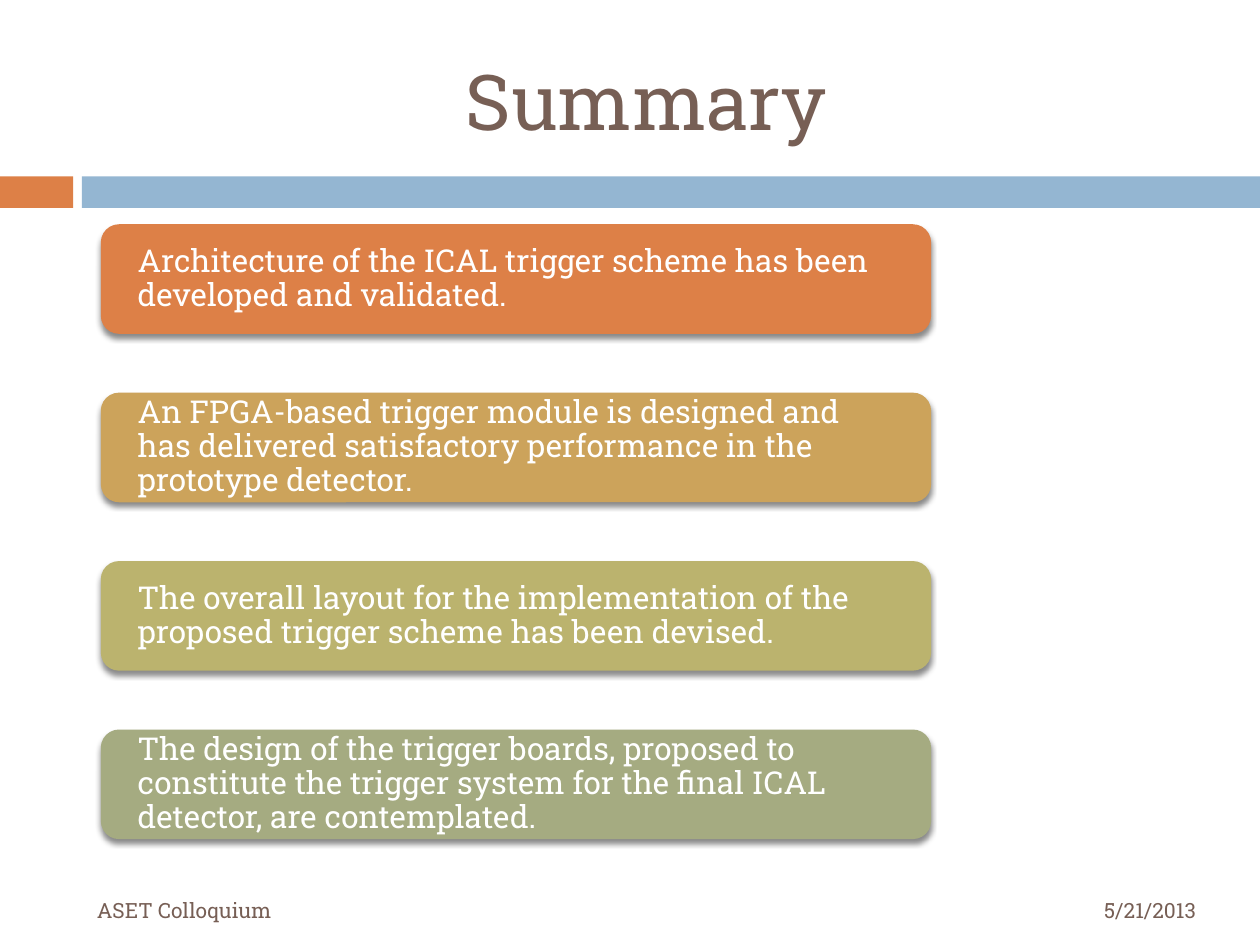
from lxml import etree
from pptx import Presentation
from pptx.dml.color import RGBColor
from pptx.enum.shapes import MSO_SHAPE
from pptx.enum.text import MSO_ANCHOR, PP_ALIGN
from pptx.oxml.ns import qn
from pptx.util import Inches, Pt

RECTANGLE = MSO_SHAPE.RECTANGLE
ROUNDED = MSO_SHAPE.ROUNDED_RECTANGLE
MIDDLE = MSO_ANCHOR.MIDDLE
LEFT, CENTER, RIGHT = PP_ALIGN.LEFT, PP_ALIGN.CENTER, PP_ALIGN.RIGHT

FONT = "Roboto Slab"
BROWN, ORANGE, BLUE, WHITE = "775F55", "DD8047", "94B6D2", "FFFFFF"
WIDTH, HEIGHT = 10, 7.5
MARGIN = 0.67
CONTENT_WIDTH = 8.92
BAND_TOP, BAND_HEIGHT = 1.4, 0.25
CARD_LEFT, CARD_WIDTH, CARD_HEIGHT = 0.8, 6.59, 0.87
FIRST_CARD_TOP, LAST_CARD_TOP = 1.78, 5.79
FOOTER_TOP, FOOTER_HEIGHT = 7.02, 0.4

CARDS = [
    (ORANGE, "Architecture of the ICAL trigger scheme has been developed and validated."),
    ("CCA35B", "An FPGA-based trigger module is designed and has delivered "
               "satisfactory performance in the prototype detector."),
    ("BBB36E", "The overall layout for the implementation of the proposed "
               "trigger scheme has been devised."),
    ("A5AB81", "The design of the trigger boards, proposed to constitute the "
               "trigger system for the final ICAL detector, are contemplated."),
]


def color(value):
    return RGBColor.from_string(value)


def write(shape, text, size, ink, align):
    frame = shape.text_frame
    frame.word_wrap = True
    frame.vertical_anchor = MIDDLE
    para = frame.paragraphs[0]
    para.text = text
    para.alignment = align
    para.font.name = FONT
    para.font.size = Pt(size)
    para.font.color.rgb = color(ink)
    return frame


def add_block(page, kind, bounds, fill):
    block = page.shapes.add_shape(kind, *map(Inches, bounds))
    block.shadow.inherit = False
    block.fill.solid()
    block.fill.fore_color.rgb = color(fill)
    block.line.fill.background()
    return block


def add_drop_shadow(shape):
    effects = shape._element.spPr.find(qn("a:effectLst"))
    shadow = etree.SubElement(
        effects, qn("a:outerShdw"), blurRad=str(Pt(3)), dist=str(Pt(2.4)),
        dir=str(90 * 60000), rotWithShape="0")
    black = etree.SubElement(shadow, qn("a:srgbClr"), val="000000")
    etree.SubElement(black, qn("a:alpha"), val="45000")


def add_title(page, text):
    title = page.shapes.title
    title.left, title.top = Inches(MARGIN), Inches(0.25)
    title.width, title.height = Inches(CONTENT_WIDTH), Inches(1.08)
    write(title, text, 44, BROWN, CENTER)


def add_band(page):
    for left, right, fill in ((0, 0.58, ORANGE), (0.65, WIDTH, BLUE)):
        add_block(page, RECTANGLE, (left, BAND_TOP, right - left, BAND_HEIGHT), fill)


def add_cards(page):
    pitch = (LAST_CARD_TOP - FIRST_CARD_TOP) / (len(CARDS) - 1)
    for row, (fill, text) in enumerate(CARDS):
        top = FIRST_CARD_TOP + row * pitch
        card = add_block(page, ROUNDED, (CARD_LEFT, top, CARD_WIDTH, CARD_HEIGHT), fill)
        add_drop_shadow(card)
        frame = write(card, text, 18, WHITE, LEFT)
        frame.margin_left = frame.margin_right = Inches(0.25)
        frame.margin_top = frame.margin_bottom = 0
        frame.paragraphs[0].line_spacing = 0.9


def add_footer(page, text, left, width, align):
    bounds = (left, FOOTER_TOP, width, FOOTER_HEIGHT)
    box = page.shapes.add_textbox(*map(Inches, bounds))
    write(box, text, 12, BROWN, align)


def main():
    deck = Presentation()
    deck.slide_width, deck.slide_height = Inches(WIDTH), Inches(HEIGHT)
    page = deck.slides.add_slide(deck.slide_layouts[5])
    add_band(page)
    add_title(page, "Summary")
    add_cards(page)
    add_footer(page, "ASET Colloquium", MARGIN, 5.93, LEFT)
    add_footer(page, "5/21/2013", 6.67, 2.92, RIGHT)
    deck.save("out.pptx")


if __name__ == "__main__":
    main()
